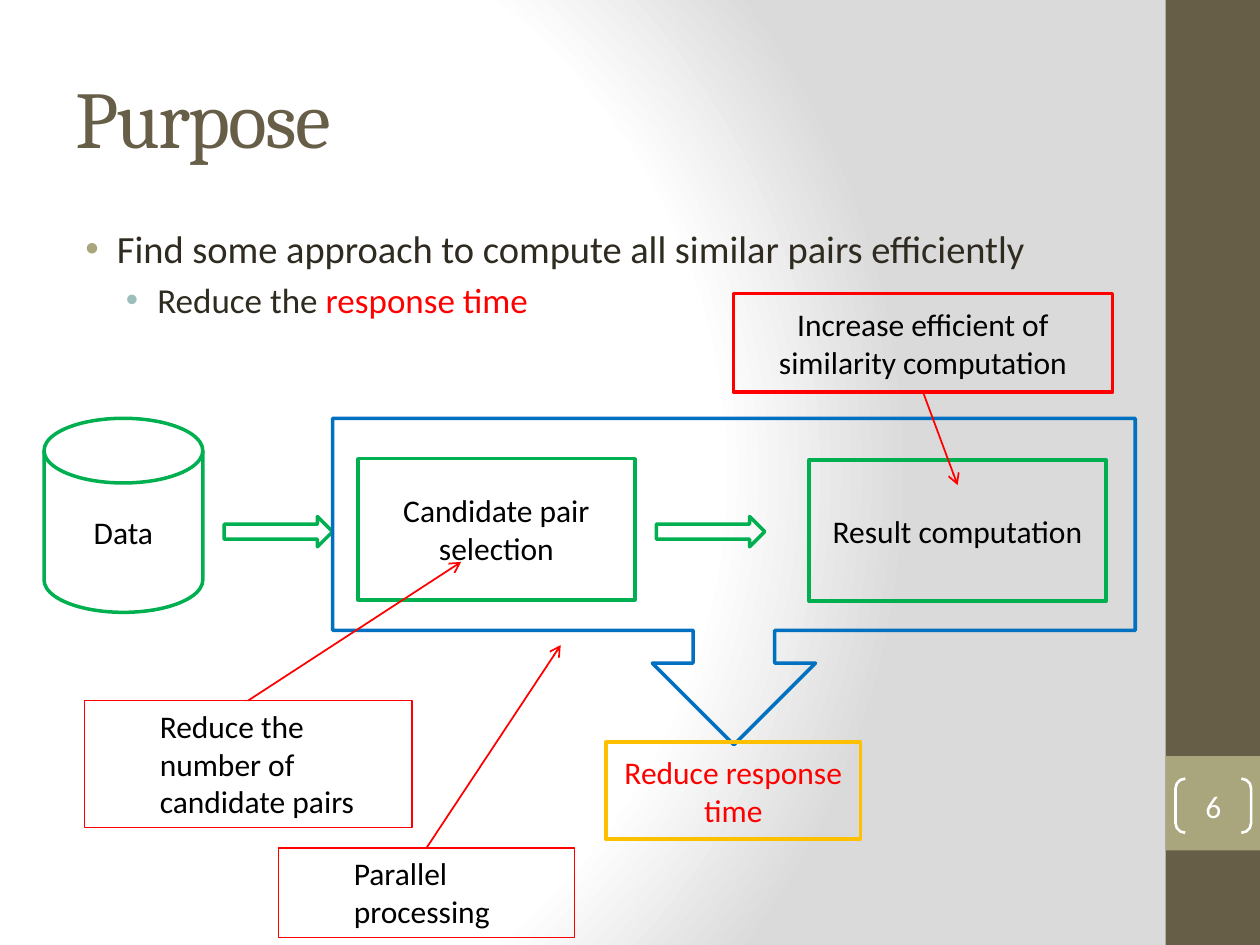
from lxml import etree
from pptx import Presentation
from pptx.dml.color import RGBColor
from pptx.enum.shapes import MSO_CONNECTOR as Link, MSO_SHAPE as Kind
from pptx.enum.text import MSO_ANCHOR as Anchor, MSO_AUTO_SIZE as Auto, PP_ALIGN as Align
from pptx.oxml.ns import qn
from pptx.util import Inches, Pt

RED, GREEN, BLUE, GOLD = "FF0000", "00B050", "0070C0", "FFC000"
BLACK, WHITE, INK = "000000", "FFFFFF", "2F2B20"
BROWN, OLIVE, TEAL, GREY = "675E47", "A9A57C", "9CBEBD", "DADADA"


def paint(target, color):
    """Set a solid colour on a fill."""
    target.solid()
    target.fore_color.rgb = RGBColor.from_string(color)


def add_tag(parent, name, **attrs):
    return etree.SubElement(parent, qn(name), {k: str(v) for k, v in attrs.items()})


def set_back(slide):
    """Radial background, white fading to grey."""
    slide.background.fill.gradient()
    grad = slide.element.find(".//" + qn("a:gradFill"))
    for child in list(grad):
        grad.remove(child)
    stops = add_tag(grad, "a:gsLst")
    for pos, color in ((0, WHITE), (75, WHITE), (100, GREY)):
        add_tag(add_tag(stops, "a:gs", pos=pos * 1000), "a:srgbClr", val=color)
    path = add_tag(grad, "a:path", path="circle")
    add_tag(path, "a:fillToRect", l=20000, t=50000, r=100000, b=50000)


def add_run(para, text, color, size=18, font="Calibri"):
    run = para.add_run()
    run.text = text
    run.font.name = font
    run.font.size = Pt(size)
    paint(run.font.fill, color)
    return run


def set_indent(para, left, first=0):
    props = para._p.get_or_add_pPr()
    props.set("marL", str(Inches(left)))
    props.set("indent", str(Inches(first)))
    return props


def add_shape(slide, kind, box, line=None, width=2, fill=None):
    shape = slide.shapes.add_shape(kind, *map(Inches, box))
    shape.shadow.inherit = False
    if fill:
        paint(shape.fill, fill)
    else:
        shape.fill.background()
    if line:
        paint(shape.line.fill, line)
        shape.line.width = Pt(width)
    else:
        shape.line.fill.background()
    return shape


def add_label(shape, text, color=BLACK):
    """Centred text inside a shape."""
    frame = shape.text_frame
    frame.word_wrap = True
    frame.vertical_anchor = Anchor.MIDDLE
    para = frame.paragraphs[0]
    para.alignment = Align.CENTER
    add_run(para, text, color)
    return frame


def add_note(slide, box, text):
    """Thin red box with indented text."""
    shape = add_shape(slide, Kind.RECTANGLE, box, RED, 0.75)
    frame = shape.text_frame
    frame.word_wrap = True
    frame.auto_size = Auto.SHAPE_TO_FIT_TEXT
    frame.vertical_anchor = Anchor.TOP
    para = frame.paragraphs[0]
    para.alignment = Align.LEFT
    set_indent(para, 0.5)
    add_run(para, text, BLACK)
    return shape


def add_arrow(slide, start, side, tip):
    """Red arrow from the side of a box to a free point."""
    x, y = map(Inches, tip)
    line = slide.shapes.add_connector(Link.STRAIGHT, x, y, x, y)
    line.begin_connect(start, side)
    paint(line.line.fill, RED)
    line.line.width = Pt(1)
    add_tag(line.line._get_or_add_ln(), "a:tailEnd", type="arrow")
    add_tag(line._element.spPr, "a:effectLst")


def add_text(slide, box):
    frame = slide.shapes.add_textbox(*map(Inches, box)).text_frame
    frame.word_wrap = True
    return frame


def add_bullet(para, left, color, size, parts):
    props = set_indent(para, left, -0.25)
    para.space_before = Pt(size * 0.2)
    add_tag(add_tag(props, "a:buClr"), "a:srgbClr", val=color)
    add_tag(props, "a:buFont", typeface="Arial")
    add_tag(props, "a:buChar", char="•")
    for text, ink in parts:
        add_run(para, text, ink, size)


def add_frame(slide):
    """Side bar and page number."""
    add_shape(slide, Kind.RECTANGLE, (9.25, 0, 0.75, 7.5), fill=BROWN)
    add_shape(slide, Kind.RECTANGLE, (9.25, 6, 0.75, 0.75), fill=OLIVE)
    page = add_shape(slide, Kind.DOUBLE_BRACKET, (9.33, 6.18, 0.6, 0.43), WHITE, 1.5)
    page.adjustments[0] = 0.18
    frame = add_label(page, "6", WHITE)
    frame.margin_left = frame.margin_right = frame.margin_top = frame.margin_bottom = 0


def add_words(slide):
    """Title and bullets."""
    title = add_text(slide, (0.5, 0.3, 8.33, 1.25))
    title.vertical_anchor = Anchor.MIDDLE
    run = add_run(title.paragraphs[0], "Purpose", BROWN, 46, "Cambria")
    run.font._element.set("spc", "-100")

    body = add_text(slide, (0.45, 1.74, 8.33, 1.0))
    add_bullet(body.paragraphs[0], 0.38, OLIVE, 22,
               [("Find some approach to compute all similar pairs efficiently", INK)])
    sub = body.add_paragraph()
    sub.level = 1
    add_bullet(sub, 0.7, TEAL, 20, [("Reduce the ", INK), ("response time", RED)])


def add_flow(slide):
    """Data, two steps and the outcome."""
    steps = (
        (Kind.FLOWCHART_MAGNETIC_DISK, (0.35, 3.32, 1.26, 1.54), "Data"),
        (Kind.RECTANGLE, (2.84, 3.64, 2.2, 1.12), "Candidate pair selection"),
        (Kind.RECTANGLE, (6.42, 3.65, 2.36, 1.12), "Result computation"),
    )
    for kind, box, text in steps:
        add_label(add_shape(slide, kind, box, GREEN), text)
    for left in (1.78, 5.21):
        add_shape(slide, Kind.RIGHT_ARROW, (left, 4.1, 0.86, 0.24), GREEN)
    add_shape(slide, Kind.DOWN_ARROW_CALLOUT, (2.64, 3.32, 6.37, 2.59), BLUE)
    goal = add_shape(slide, Kind.RECTANGLE, (4.81, 5.89, 2.02, 0.77), GOLD)
    add_label(goal, "Reduce response time", RED)


def add_notes(slide):
    """Red remarks and their arrows."""
    fewer = add_note(slide, (0.67, 5.56, 2.6, 1.01), "Reduce the number of candidate pairs")
    add_arrow(slide, fewer, 0, (3.66, 4.46))
    faster = add_shape(slide, Kind.RECTANGLE, (5.82, 2.33, 3.01, 0.78), RED)
    add_label(faster, "Increase efficient of similarity computation")
    add_arrow(slide, faster, 2, (7.6, 3.85))
    spread = add_note(slide, (2.21, 6.73, 2.35, 0.71), "Parallel processing")
    add_arrow(slide, spread, 0, (4.45, 5.12))


def main():
    deck = Presentation()
    deck.slide_width, deck.slide_height = Inches(10), Inches(7.5)
    slide = deck.slides.add_slide(deck.slide_layouts[6])
    set_back(slide)
    add_frame(slide)
    add_words(slide)
    add_flow(slide)
    add_notes(slide)
    deck.save("out.pptx")


if __name__ == "__main__":
    main()
